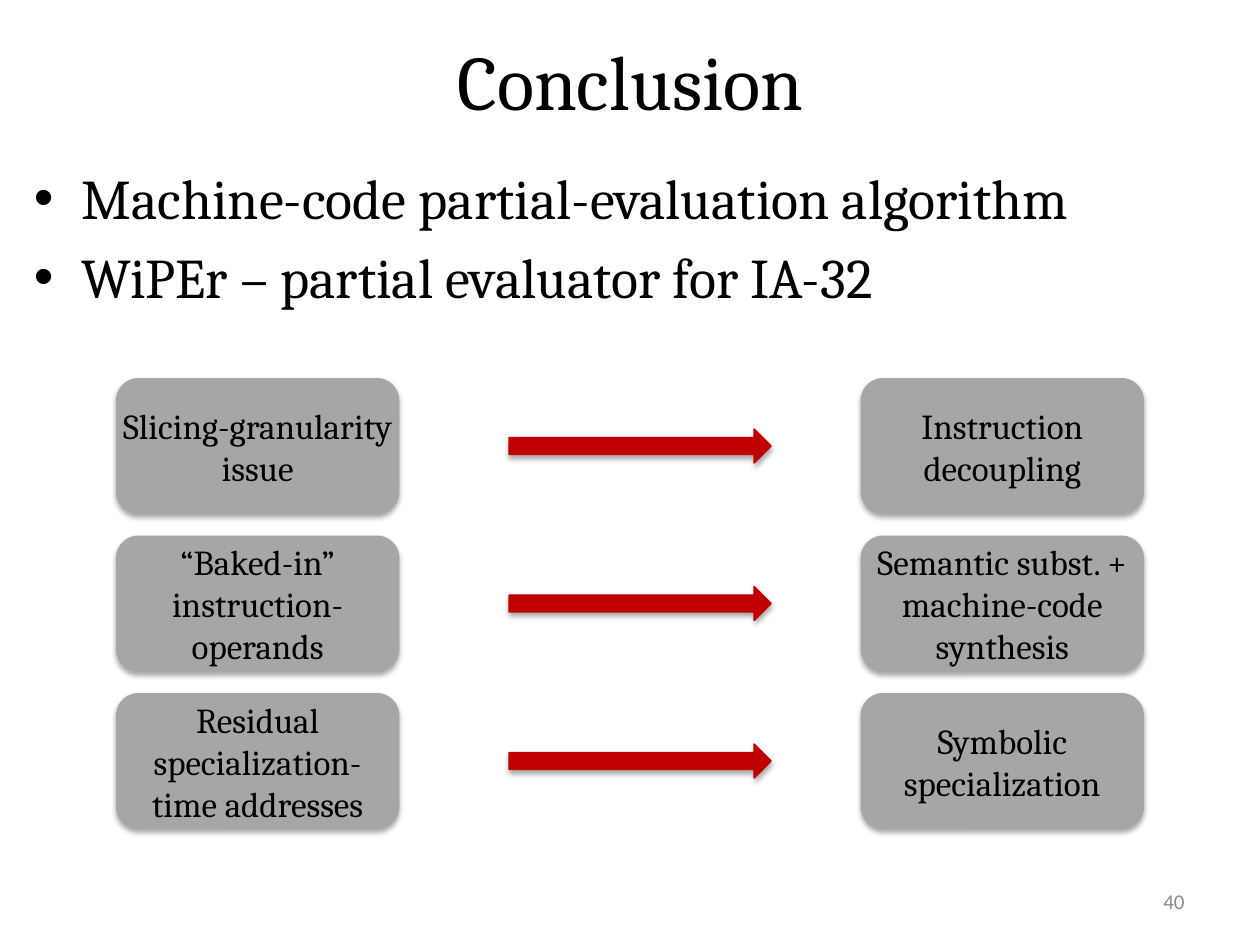
from dataclasses import dataclass

from lxml import etree
from pptx import Presentation
from pptx.dml.color import RGBColor
from pptx.enum.shapes import MSO_SHAPE
from pptx.enum.text import MSO_ANCHOR, PP_ALIGN
from pptx.oxml.ns import qn
from pptx.util import Inches, Pt

ROUNDED, ARROW = MSO_SHAPE.ROUNDED_RECTANGLE, MSO_SHAPE.RIGHT_ARROW
TOP, MIDDLE = MSO_ANCHOR.TOP, MSO_ANCHOR.MIDDLE
LEFT, CENTER, RIGHT = PP_ALIGN.LEFT, PP_ALIGN.CENTER, PP_ALIGN.RIGHT


@dataclass(frozen=True)
class Theme:
    font: str = "Cambria"
    number_font: str = "Calibri"
    text: RGBColor = RGBColor(0, 0, 0)
    muted: RGBColor = RGBColor(0x8C, 0x8C, 0x8C)
    card: RGBColor = RGBColor(0xA6, 0xA6, 0xA6)
    arrow: RGBColor = RGBColor(0xC0, 0, 0)
    title_size: int = 44
    body_size: int = 32
    card_size: int = 20
    number_size: int = 12


THEME = Theme()
BULLETS = [
    "Machine-code partial-evaluation algorithm",
    "WiPEr – partial evaluator for IA-32",
]
ISSUES_AND_SOLUTIONS = [
    ("Slicing-granularity issue", "Instruction decoupling"),
    ("“Baked-in” instruction-operands", "Semantic subst. + machine-code synthesis"),
    ("Residual specialization-time addresses", "Symbolic specialization"),
]
ISSUE_X, ARROW_X, SOLUTION_X = 0.92, 4.04, 6.83
FIRST_ROW, ROW_STEP = 3, 1.25
CARD_WIDTH, CARD_HEIGHT = 2.25, 1.08
ARROW_WIDTH, ARROW_HEIGHT = 2.08, 0.27


def write(para, text, size, align, font=THEME.font, color=THEME.text):
    para.alignment = align
    span = para.add_run()
    span.text = text
    span.font.name = font
    span.font.size = Pt(size)
    span.font.color.rgb = color


def add_text_box(page, left, top, width, height, anchor):
    box = page.shapes.add_textbox(
        Inches(left), Inches(top), Inches(width), Inches(height))
    box.text_frame.word_wrap = True
    box.text_frame.vertical_anchor = anchor
    return box.text_frame


def make_bullet(para):
    para.space_before = Pt(0.2 * THEME.body_size)
    props = para._p.get_or_add_pPr()
    props.set("marL", str(Inches(0.38)))
    props.set("indent", str(-Inches(0.38)))
    etree.SubElement(props, qn("a:buFont"), typeface="Arial")
    etree.SubElement(props, qn("a:buChar"), char="•")


def add_shadow(shape):
    shape.shadow.inherit = False
    effects = shape._element.spPr.find(qn("a:effectLst"))
    shadow = etree.SubElement(
        effects, qn("a:outerShdw"), blurRad=str(Pt(3.1)), dist=str(Pt(1.8)),
        dir="5400000", rotWithShape="0")
    color = etree.SubElement(shadow, qn("a:srgbClr"), val="000000")
    etree.SubElement(color, qn("a:alpha"), val="35000")


def add_filled_shape(page, kind, left, top, width, height, fill):
    shape = page.shapes.add_shape(
        kind, Inches(left), Inches(top), Inches(width), Inches(height))
    shape.fill.solid()
    shape.fill.fore_color.rgb = fill
    add_shadow(shape)
    return shape


def add_card(page, left, top, text):
    card = add_filled_shape(
        page, ROUNDED, left, top, CARD_WIDTH, CARD_HEIGHT, THEME.card)
    card.line.fill.background()
    frame = card.text_frame
    frame.word_wrap = True
    frame.vertical_anchor = MIDDLE
    frame.margin_left = frame.margin_right = 0
    frame.margin_top = frame.margin_bottom = 0
    write(frame.paragraphs[0], text, THEME.card_size, CENTER)


def add_arrow(page, row_top):
    top = row_top + (CARD_HEIGHT - ARROW_HEIGHT) / 2
    arrow = add_filled_shape(
        page, ARROW, ARROW_X, top, ARROW_WIDTH, ARROW_HEIGHT, THEME.arrow)
    arrow.line.color.rgb = THEME.arrow
    arrow.line.width = Pt(0.75)


def main():
    deck = Presentation()
    deck.slide_width, deck.slide_height = Inches(10), Inches(7.5)
    page = deck.slides.add_slide(deck.slide_layouts[6])

    # Title
    title = add_text_box(page, 0.17, 0.17, 9.67, 0.92, MIDDLE)
    write(title.paragraphs[0], "Conclusion", THEME.title_size, CENTER)

    # Bulleted contributions
    body = add_text_box(page, 0.17, 1.25, 9.67, 6.08, TOP)
    for index, text in enumerate(BULLETS):
        para = body.add_paragraph() if index else body.paragraphs[0]
        make_bullet(para)
        write(para, text, THEME.body_size, LEFT)

    # Slide number
    number = add_text_box(page, 7.17, 6.95, 2.33, 0.4, MIDDLE)
    write(number.paragraphs[0], "40", THEME.number_size, RIGHT,
          THEME.number_font, THEME.muted)

    # Each issue points to its solution
    for row, (issue, solution) in enumerate(ISSUES_AND_SOLUTIONS):
        top = FIRST_ROW + row * ROW_STEP
        add_card(page, ISSUE_X, top, issue)
        add_arrow(page, top)
        add_card(page, SOLUTION_X, top, solution)

    deck.save("out.pptx")


if __name__ == "__main__":
    main()
